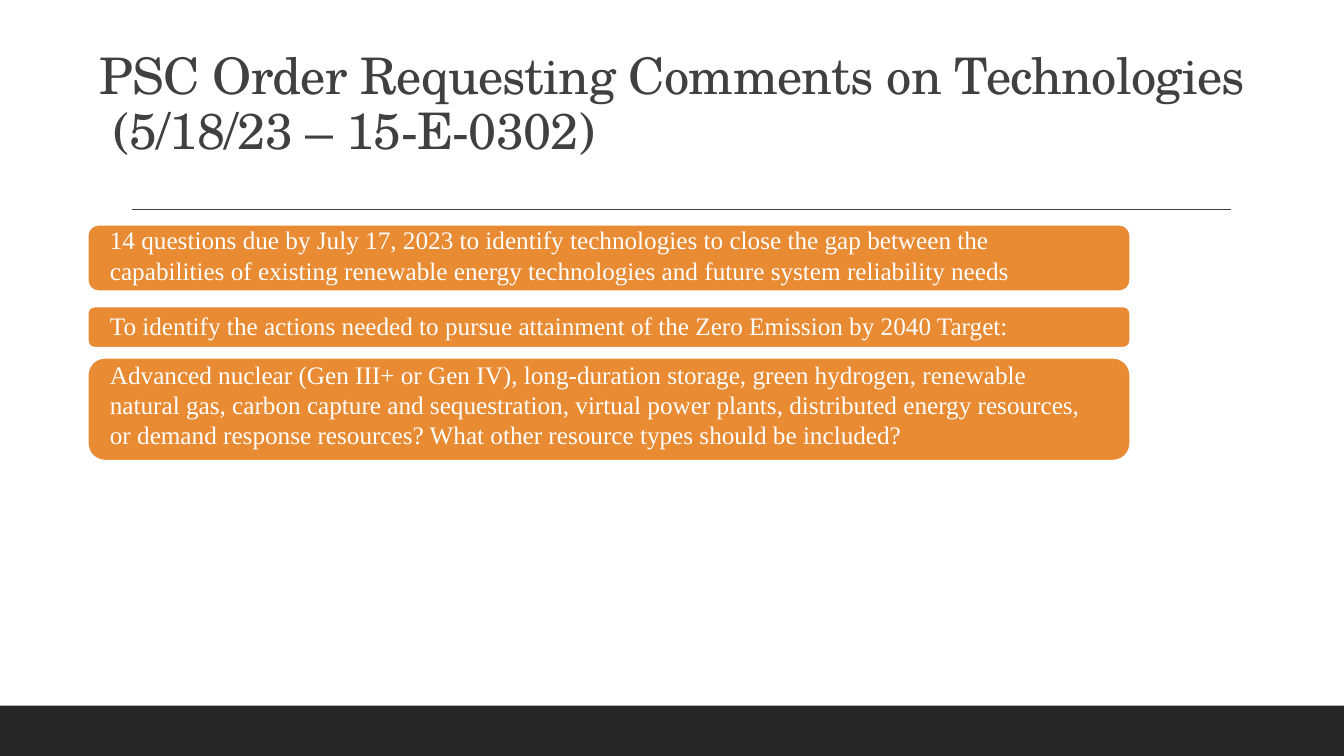
from lxml import etree
from pptx import Presentation
from pptx.dml.color import RGBColor
from pptx.enum.shapes import MSO_CONNECTOR, MSO_SHAPE
from pptx.enum.text import MSO_ANCHOR, MSO_AUTO_SIZE, PP_ALIGN
from pptx.oxml.ns import qn
from pptx.util import Pt

EMU_PER_PX = 9144  # 100 px to the inch
SLIDE_WIDTH, SLIDE_HEIGHT = 1333, 750

TITLE = "PSC Order Requesting Comments on Technologies\v (5/18/23 – 15-E-0302)"
# top, banner height, text height, text
BANNERS = [
    (223, 66, 60, "14 questions due by July 17, 2023 to identify technologies to close "
     "the gap between the capabilities of existing renewable energy technologies "
     "and future system reliability needs"),
    (304, 41, 37, "To identify the actions needed to pursue attainment of the "
     "Zero Emission by 2040 Target:"),
    (355, 102, 92, "Advanced nuclear (Gen III+ or Gen IV), long-duration storage, "
     "green hydrogen, renewable natural gas, carbon capture and sequestration, "
     "virtual power plants, distributed energy resources, or demand response "
     "resources? What other resource types should be included?"),
]


def px(*lengths):
    return [length * EMU_PER_PX for length in lengths]


def color(hex_code):
    return RGBColor.from_string(hex_code)


def style_runs(paragraph, font_name, size, hex_code):
    for run in paragraph.runs:
        run.font.name = font_name
        run.font.size = Pt(size)
        run.font.color.rgb = color(hex_code)


def add_block(shapes, preset, box, fill):
    """Add a filled shape without outline or shadow."""
    block = shapes.add_shape(preset, *px(*box))
    block.shadow.inherit = False
    block.fill.solid()
    block.fill.fore_color.rgb = color(fill)
    block.line.fill.background()
    return block


def add_rule(shapes, left, right, y):
    rule = shapes.add_connector(MSO_CONNECTOR.STRAIGHT, *px(left, y, right, y))
    rule.line.color.rgb = color("404040")
    rule.line.width = Pt(1)
    etree.SubElement(rule._element.spPr, qn("a:effectLst"))


def set_title(title):
    title.left, title.top, title.width, title.height = px(89, 80, 1160, 84)
    frame = title.text_frame
    frame.text = TITLE
    frame.auto_size = MSO_AUTO_SIZE.NONE
    frame.vertical_anchor = MSO_ANCHOR.BOTTOM
    heading = frame.paragraphs[0]
    heading.alignment = PP_ALIGN.LEFT
    heading.line_spacing = 0.9
    style_runs(heading, "TeX Gyre Schola", 36, "404040")
    for run in heading.runs:
        run.font._element.set("spc", "-50")


def add_banner(shapes, top, banner_height, text_height, text):
    """Group a rounded banner with the text laid over it."""
    group = shapes.add_group_shape()
    banner = add_block(group.shapes, MSO_SHAPE.ROUNDED_RECTANGLE,
                       (87, top, 1034, banner_height), "E88B33")
    banner.line.color.rgb = color("FFFFFF")
    banner.line.width = Pt(1.25)

    label = group.shapes.add_textbox(*px(80, top, 1022, text_height))
    frame = label.text_frame
    frame.text = text
    frame.word_wrap = True
    frame.vertical_anchor = MSO_ANCHOR.MIDDLE
    frame.margin_left, frame.margin_right = px(29, 29)
    frame.margin_top = frame.margin_bottom = 0
    style_runs(frame.paragraphs[0], "Times New Roman", 18, "FFFFFF")


def main():
    presentation = Presentation()
    presentation.slide_width, presentation.slide_height = px(SLIDE_WIDTH, SLIDE_HEIGHT)
    title_only = presentation.slide_layouts[5]
    slide = presentation.slides.add_slide(title_only)

    add_block(slide.shapes, MSO_SHAPE.RECTANGLE, (0, 700, SLIDE_WIDTH, 50), "262626")
    add_rule(slide.shapes, 131, 1221, 208)
    set_title(slide.shapes.title)
    for banner in BANNERS:
        add_banner(slide.shapes, *banner)

    presentation.save("out.pptx")


if __name__ == "__main__":
    main()
